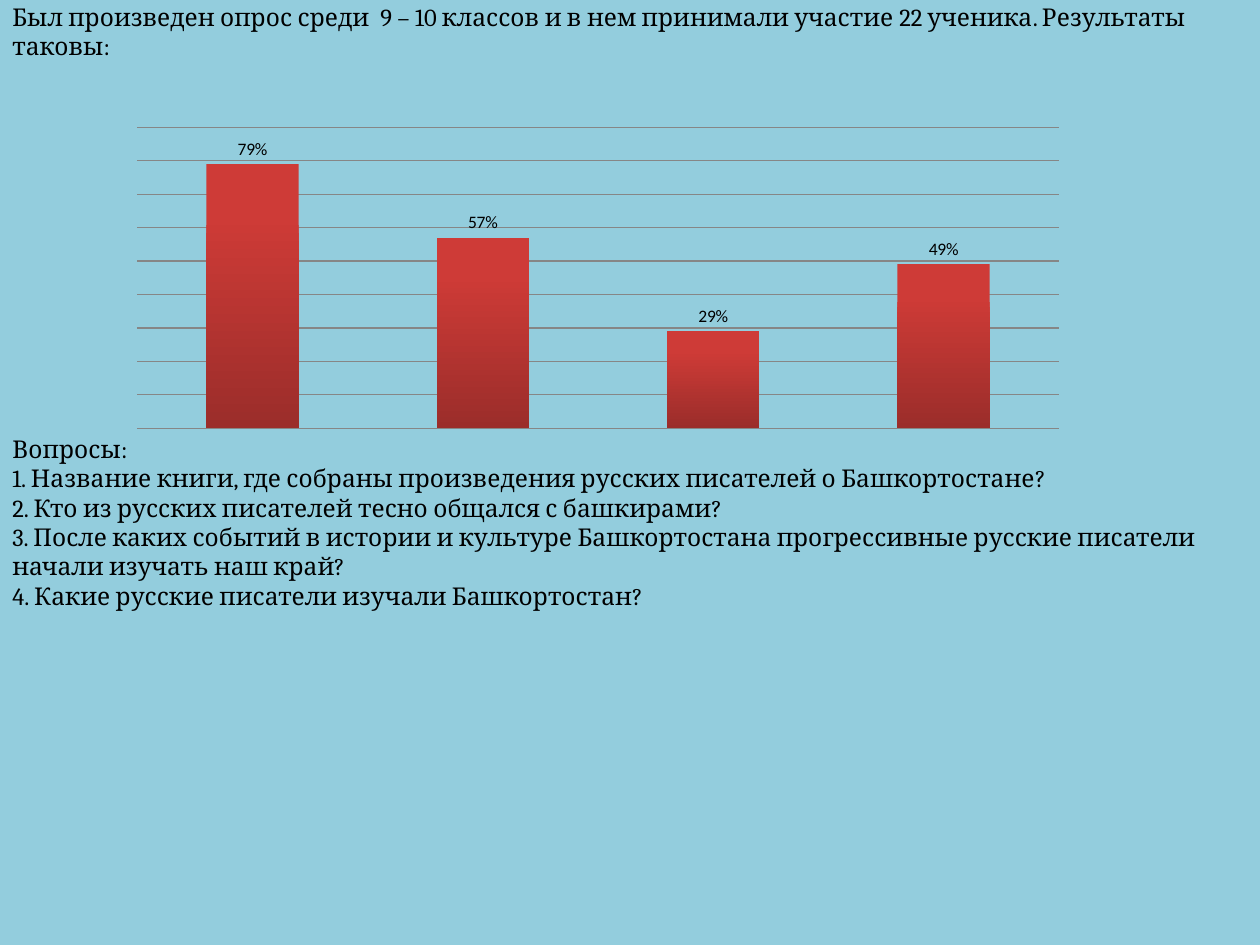
from lxml import etree
from pptx import Presentation
from pptx import util as u
from pptx.chart.data import CategoryChartData
from pptx.dml.color import RGBColor
from pptx.enum import chart as ch
from pptx.enum import text
from pptx.oxml.ns import qn

SKY = RGBColor(0x93, 0xCD, 0xDD)
BLACK = RGBColor(0, 0, 0)
GRID = RGBColor(0x86, 0x86, 0x86)
BAR_TOP = RGBColor(0xCE, 0x3B, 0x37)
BAR_BOTTOM = RGBColor(0x9B, 0x2D, 0x2A)
SCALE = 914400 / 126

INTRO = ["Был произведен опрос среди  9 – 10 классов и в нем принимали участие 22 ученика. Результаты таковы:"]
QUESTIONS = [
    "Вопросы:",
    "1. Название книги, где собраны произведения русских писателей о Башкортостане?",
    "2. Кто из русских писателей тесно общался с башкирами?",
    "3. После каких событий в истории и культуре Башкортостана прогрессивные русские писатели начали изучать наш край?",
    "4. Какие русские писатели изучали Башкортостан?",
]
ANSWERS = {"1": 0.79, "2": 0.57, "3": 0.29, "4": 0.49}
PLOT_AREA = {"x": 0.073, "y": 0.2, "w": 0.858, "h": 0.681}


def px(*lengths):
    return [round(length * SCALE) for length in lengths]


def assign(target, values):
    for name, value in values.items():
        setattr(target, name, value)


class SurveySlide:
    """Style and drawing methods for the survey results slide."""

    body = {"name": "Cambria", "size": u.Pt(14)}
    labels = {"name": "Calibri", "size": u.Pt(10)}
    frame = {
        "word_wrap": True,
        "vertical_anchor": text.MSO_ANCHOR.MIDDLE,
        "auto_size": text.MSO_AUTO_SIZE.SHAPE_TO_FIT_TEXT,
    }

    def __init__(self, deck):
        self.slide = deck.slides.add_slide(deck.slide_layouts[6])
        background = self.slide.background.fill
        background.solid()
        background.fore_color.rgb = SKY

    def add_text(self, place, lines):
        box = self.slide.shapes.add_textbox(*px(*place))
        frame = box.text_frame
        assign(frame, self.frame)
        for index, line in enumerate(lines):
            para = frame.add_paragraph() if index else frame.paragraphs[0]
            span = para.add_run()
            span.text = line
            assign(span.font, self.body)
            span.font.color.rgb = BLACK

    def add_columns(self, place, answers):
        data = CategoryChartData(number_format="0%")
        data.categories = list(answers)
        data.add_series("Series 1", list(answers.values()))
        chart = self.slide.shapes.add_chart(
            ch.XL_CHART_TYPE.COLUMN_CLUSTERED, *px(*place), data).chart
        assign(chart, {"has_legend": False, "has_title": False})
        assign(chart.font, self.labels)
        chart.font.color.rgb = BLACK
        chart.category_axis.visible = False
        axis = chart.value_axis
        assign(axis, {"visible": False, "has_major_gridlines": True,
                      "minimum_scale": 0, "maximum_scale": 0.9, "major_unit": 0.1})
        axis.tick_labels.number_format = "0%"
        axis.tick_labels.number_format_is_linked = False
        grid = axis.major_gridlines.format.line
        grid.width = u.Pt(0.75)
        grid.color.rgb = GRID
        plot = chart.plots[0]
        assign(plot, {"gap_width": 150, "vary_by_categories": False, "has_data_labels": True})
        assign(plot.data_labels, {"show_value": True, "number_format": "0%",
                                  "number_format_is_linked": False,
                                  "position": ch.XL_LABEL_POSITION.OUTSIDE_END})
        self.shade(plot.series[0].format.fill)
        self.place_plot(chart)

    def shade(self, fill):
        fill.gradient()
        fill.gradient_angle = 270
        for stop, position, color in zip(fill.gradient_stops, (0.2, 1), (BAR_TOP, BAR_BOTTOM)):
            stop.position = position
            stop.color.rgb = color

    def place_plot(self, chart):
        area = chart.element.find(".//" + qn("c:plotArea"))
        for layout in area.findall(qn("c:layout")):
            area.remove(layout)
        layout = etree.Element(qn("c:layout"))
        area.insert(0, layout)
        manual = etree.SubElement(layout, qn("c:manualLayout"))
        settings = {"layoutTarget": "inner", "xMode": "edge", "yMode": "edge", **PLOT_AREA}
        for name, value in settings.items():
            etree.SubElement(manual, qn("c:" + name)).set("val", str(value))


def main():
    deck = Presentation()
    deck.slide_width, deck.slide_height = px(1260, 945)
    survey = SurveySlide(deck)
    survey.add_text((0, 0, 1260, 63), INTRO)
    survey.add_columns((59, 39, 1074, 442), ANSWERS)
    survey.add_text((0, 427, 1260, 190), QUESTIONS)
    deck.save("out.pptx")


if __name__ == "__main__":
    main()
